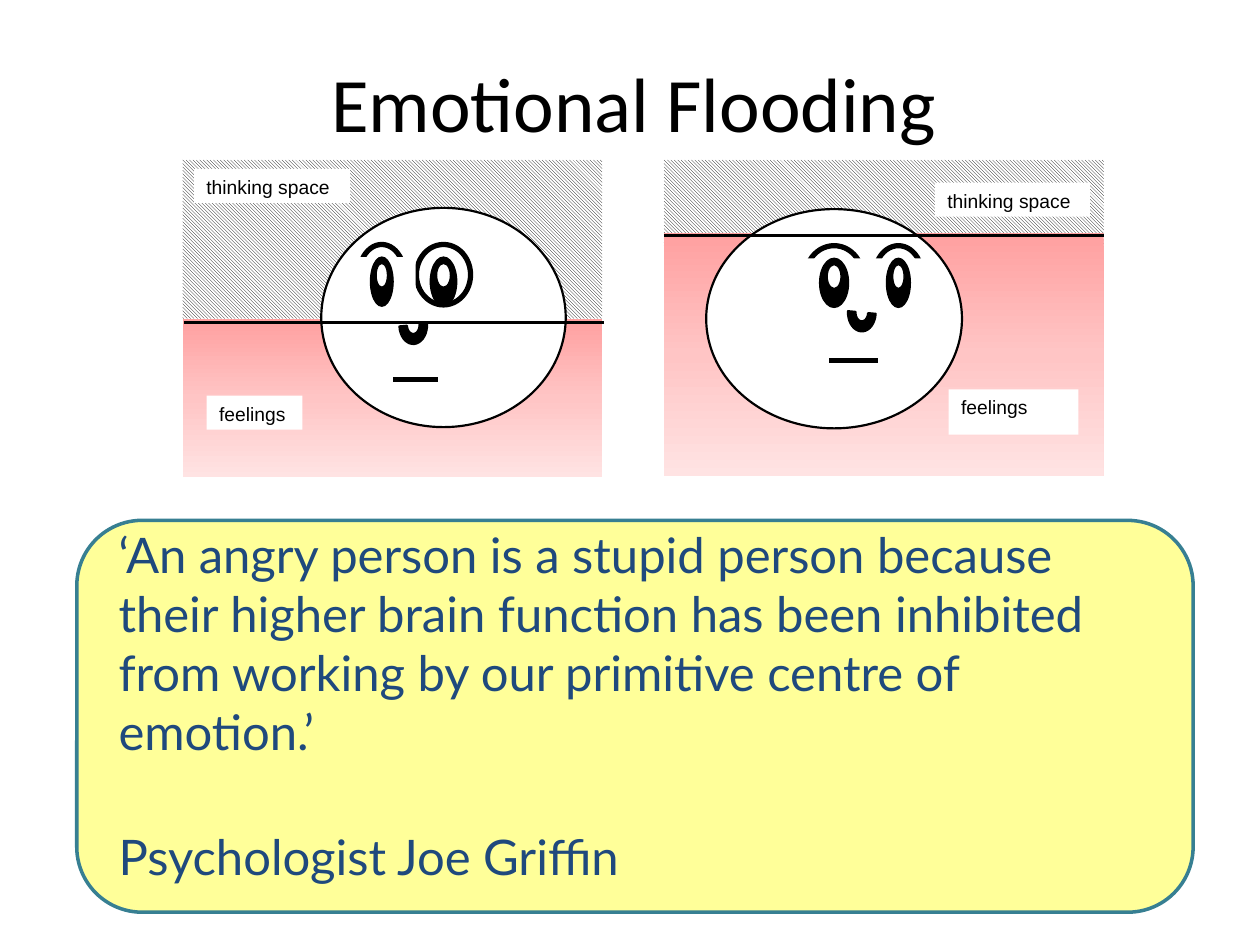
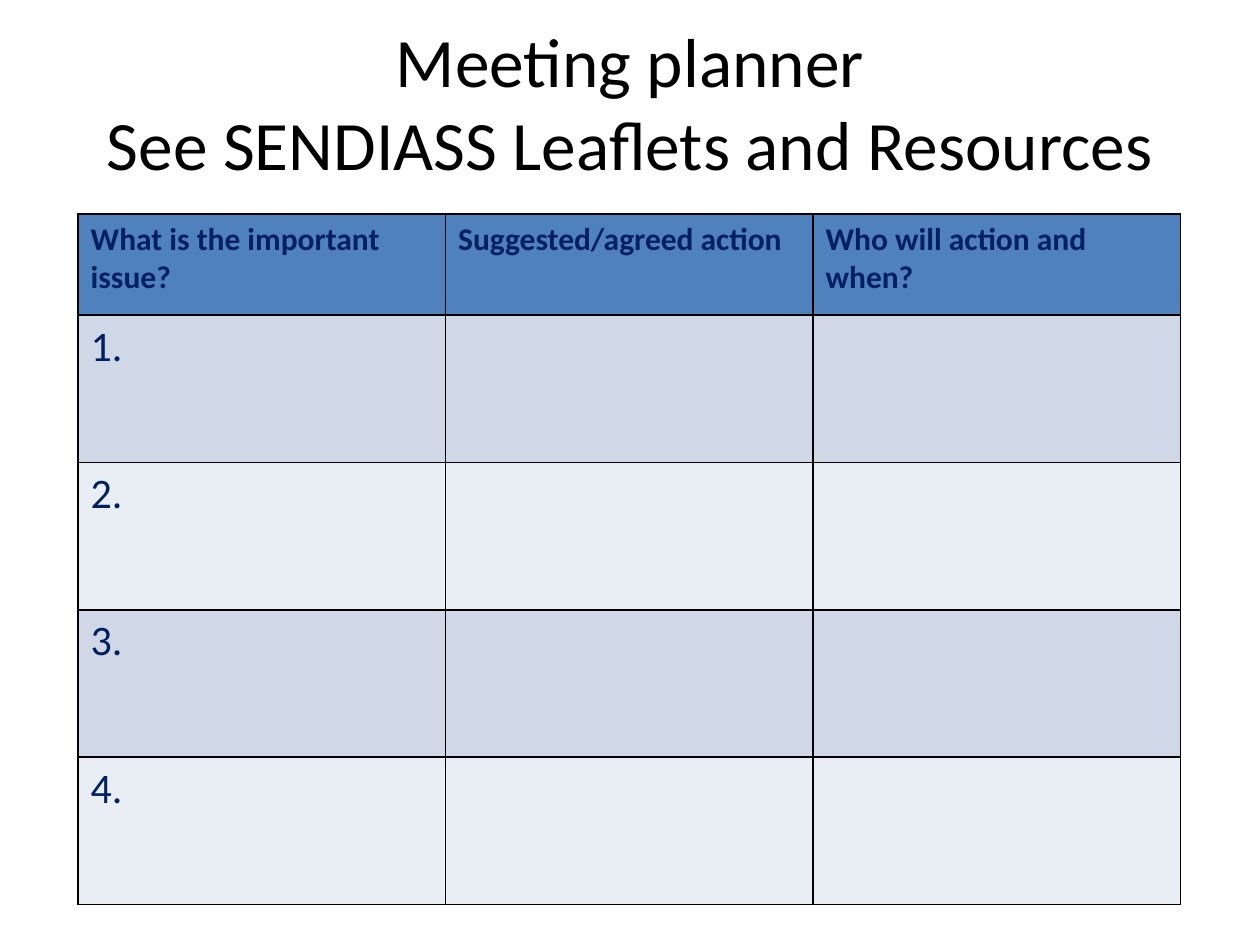
from copy import deepcopy
from math import cos, radians, sin

from lxml.etree import SubElement
from pptx import Presentation
from pptx.dml.color import RGBColor
from pptx.enum.dml import MSO_PATTERN
from pptx.enum.shapes import MSO_CONNECTOR, MSO_SHAPE
from pptx.enum.text import MSO_ANCHOR, PP_ALIGN
from pptx.oxml import parse_xml
from pptx.oxml.ns import nsdecls, qn
from pptx.util import Inches, Pt

COLORS = {
    "ink": "000000", "paper": "FFFFFF", "quote": "FFFF99", "quote_line": "377F92",
    "quote_text": "1F497D", "header": "4F81BD", "cell_text": "002060",
    "band_dark": "D0D8E8", "band_light": "E9EDF4",
    "flood_top": "FFA0A0", "flood_mid": "FFC5C5", "flood_low": "FFE3E3",
}


def rgb(name):
    return RGBColor.from_string(COLORS[name])


class Deck:
    def __init__(self):
        self.prs = Presentation()
        self.prs.slide_width, self.prs.slide_height = Inches(10), Inches(7.5)

    def new_slide(self, title, left, size):
        self.s = self.prs.slides.add_slide(self.prs.slide_layouts[5])
        self.shapes = self.s.shapes
        sp = self.s.shapes.title
        sp.left, sp.top = Inches(left), Inches(0.18)
        sp.width, sp.height = Inches(9), Inches(1.25)
        tf = sp.text_frame
        tf.text = title
        tf.vertical_anchor = MSO_ANCHOR.MIDDLE
        self.format(tf.paragraphs[0], "Calibri", size, "ink", align=PP_ALIGN.CENTER)

    def start_group(self):
        self.shapes = self.s.shapes.add_group_shape().shapes

    def format(self, p, font, size, color, bold=False, align=PP_ALIGN.LEFT):
        p.alignment = align
        for r in p.runs:
            r.font.name, r.font.size, r.font.bold = font, Pt(size), bold
            r.font.color.rgb = rgb(color)

    def paint(self, sp, fill, line=None, width=1.0):
        sp.shadow.inherit = False
        sp.fill.solid()
        sp.fill.fore_color.rgb = rgb(fill)
        if line:
            sp.line.color.rgb = rgb(line)
            sp.line.width = Pt(width)
        else:
            sp.line.fill.background()
        return sp

    def shape(self, kind, x, y, w, h, fill="paper", line=None, width=1.0):
        sp = self.shapes.add_shape(kind, Inches(x), Inches(y), Inches(w), Inches(h))
        return self.paint(sp, fill, line, width)

    def rect(self, x, y, w, h):
        return self.shape(MSO_SHAPE.RECTANGLE, x, y, w, h)

    def oval(self, cx, y, w, h, fill="paper", width=0.75):
        return self.shape(MSO_SHAPE.OVAL, cx - w / 2, y, w, h, fill, "ink", width)

    def hatch(self, x, y, w, h):
        fill = self.rect(x, y, w, h).fill
        fill.patterned()
        fill.pattern = MSO_PATTERN.LIGHT_DOWNWARD_DIAGONAL
        fill.fore_color.rgb, fill.back_color.rgb = rgb("ink"), rgb("paper")

    def flood(self, x, y, w, h):
        sp = self.rect(x, y, w, h)
        sp.fill.gradient()
        sp.fill.gradient_angle = 270
        stops = sp._element.spPr.find(qn("a:gradFill")).find(qn("a:gsLst"))
        stops.insert(1, deepcopy(stops[0]))
        names = ("flood_top", "flood_mid", "flood_low")
        for i, (stop, name) in enumerate(zip(sp.fill.gradient_stops, names)):
            stop.position = i / 2
            stop.color.rgb = rgb(name)

    def line(self, x1, x2, y, width):
        c = self.shapes.add_connector(
            MSO_CONNECTOR.STRAIGHT, Inches(x1), Inches(y), Inches(x2), Inches(y))
        c.line.color.rgb, c.line.width = rgb("ink"), Pt(width)
        SubElement(c._element.spPr, qn("a:effectLst"))

    def label(self, text, x, y, w, h):
        tf = self.rect(x, y, w, h).text_frame
        tf.text = text
        tf.word_wrap = True
        tf.vertical_anchor = MSO_ANCHOR.TOP
        self.format(tf.paragraphs[0], "Arial", 11, "ink")

    def eye(self, cx, top, brow, pupil, glint, cover=None):
        self.oval(cx, top, brow, 0.48, width=3)
        if cover:
            self.rect(cx - cover / 2, top + 0.1, cover, 0.48)
        self.oval(cx, top + 0.1, pupil, 0.39, "ink")
        self.oval(cx, top + 0.15, glint, 0.19)

    def nose(self, cx, cy, tilt):
        outer = [(0.11, 0.15, a + tilt) for a in range(0, 181, 10)]
        inner = [(0.05, 0.07, a + tilt) for a in range(180, -1, -10)]
        points = [(Inches(cx + rx * cos(radians(a))), Inches(cy + ry * sin(radians(a))))
                  for rx, ry, a in outer + inner]
        builder = self.shapes.build_freeform(*points[0])
        builder.add_line_segments(points[1:], close=True)
        self.paint(builder.convert_to_shape(), "ink", "ink", 1.25)

    def quote(self, paragraphs, x, y, w, h):
        sp = self.shape(MSO_SHAPE.ROUNDED_RECTANGLE, x, y, w, h, "quote", "quote_line", 2)
        tf = sp.text_frame
        tf.word_wrap = True
        tf.vertical_anchor = MSO_ANCHOR.MIDDLE
        tf.margin_left, tf.margin_right = Inches(0.18), Inches(0.12)
        tf.margin_top, tf.margin_bottom = 0, Inches(0.18)
        for i, text in enumerate(paragraphs):
            p = tf.add_paragraph() if i else tf.paragraphs[0]
            p.text = text
            p.space_before = Pt(38 if i else 0)
            self.format(p, "Lato", 28, "quote_text")

    def border(self, cell):
        tc_pr = cell._tc.get_or_add_tcPr()
        for i, side in enumerate("LRTB"):
            tc_pr.insert(i, parse_xml(
                f'<a:ln{side} {nsdecls("a")} w="12700"><a:solidFill>'
                f'<a:srgbClr val="{COLORS["ink"]}"/></a:solidFill></a:ln{side}>'))

    def table(self, rows, x, y, w, heights):
        table = self.shapes.add_table(
            len(rows), len(rows[0]), Inches(x), Inches(y), Inches(w),
            Inches(sum(heights))).table
        for i, (texts, height) in enumerate(zip(rows, heights)):
            table.rows[i].height = Inches(height)
            band = ("band_dark" if i % 2 else "band_light") if i else "header"
            for j, text in enumerate(texts):
                cell = table.cell(i, j)
                cell.text = text
                cell.fill.solid()
                cell.fill.fore_color.rgb = rgb(band)
                self.border(cell)
                self.format(cell.text_frame.paragraphs[0], "Calibri",
                            24 if i else 18, "cell_text", bold=i == 0)


def emotional_flooding(deck):
    deck.new_slide("Emotional Flooding", 0.53, 44)
    deck.quote(["‘An angry person is a stupid person because their higher brain function "
                "has been inhibited from working by our primitive centre of emotion.’",
                "Psychologist Joe Griffin"], 0.61, 4.13, 8.86, 3.11)

    deck.start_group()
    deck.hatch(1.45, 1.27, 3.33, 1.26)
    deck.flood(1.45, 2.53, 3.33, 1.26)
    deck.oval(3.52, 1.65, 1.94, 1.74, width=1.25)
    deck.rect(2.66, 2.24, 1.61, 0.58)
    deck.eye(3.52, 1.94, 0.43, 0.21, 0.11)
    deck.eye(3.03, 1.94, 0.36, 0.18, 0.09, cover=0.54)
    deck.nose(3.28, 2.58, -4)
    deck.label("thinking space", 1.54, 1.34, 1.24, 0.27)
    deck.label("feelings", 1.64, 3.14, 0.76, 0.27)
    deck.line(3.12, 3.48, 3.01, 3)
    deck.line(1.46, 4.79, 2.56, 1.25)

    deck.start_group()
    deck.hatch(5.27, 1.27, 3.49, 0.69)
    deck.flood(5.27, 1.85, 3.49, 1.93)
    deck.oval(6.62, 1.66, 2.03, 1.74, width=1.25)
    deck.eye(6.62, 1.95, 0.45, 0.23, 0.11, cover=0.68)
    deck.eye(7.13, 1.95, 0.38, 0.19, 0.09, cover=0.56)
    deck.nose(6.84, 2.48, 4)
    deck.label("thinking space", 7.42, 1.45, 1.23, 0.27)
    deck.label("feelings", 7.53, 3.09, 1.03, 0.36)
    deck.line(5.27, 8.76, 1.87, 1.25)
    deck.line(6.58, 6.97, 2.86, 3)


def meeting_planner(deck):
    deck.new_slide("Meeting planner\vSee SENDIASS Leaflets and Resources", 0.5, 39.6)
    header = ["What is the important issue?", "Suggested/agreed action",
              "Who will action and when?"]
    issues = [[f"{n}.", "", ""] for n in range(1, 5)]
    deck.table([header] + issues, 0.62, 1.7, 8.75, [0.8] + [1.17] * 4)


def main():
    deck = Deck()
    emotional_flooding(deck)
    meeting_planner(deck)
    deck.prs.save("out.pptx")


if __name__ == "__main__":
    main()
